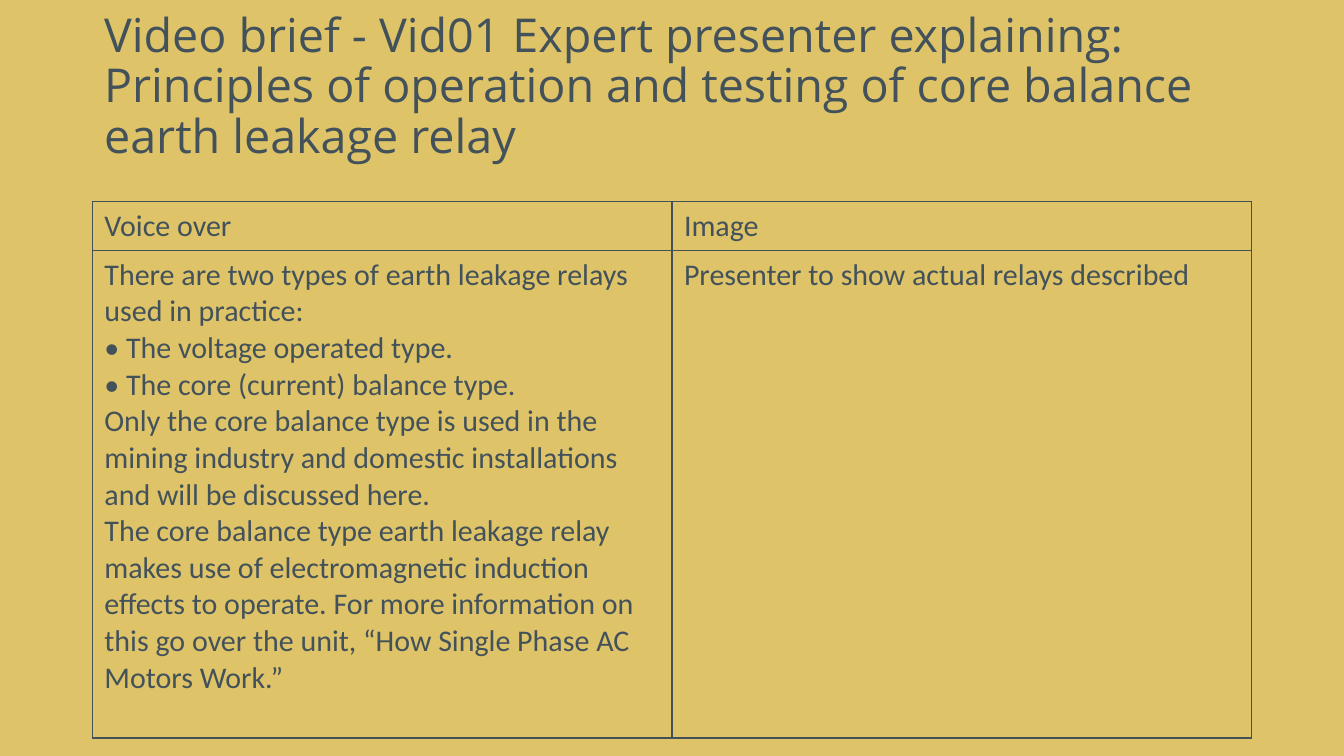
"""Builds the video brief slide with its voice over and image table."""
import pptx
import pptx.util
import pptx.dml.color
import pptx.enum.text
import pptx.oxml
import pptx.oxml.ns

COLOURS = {"background": "DEC368", "ink": "43525A"}
INK = pptx.dml.color.RGBColor.from_string(COLOURS["ink"])
BORDER_WIDTH = pptx.util.Pt(1)

HEADINGS = ["Voice over", "Image"]
VOICE_OVER = [
    "There are two types of earth leakage relays used in practice:",
    "• The voltage operated type.",
    "• The core (current) balance type.",
    "Only the core balance type is used in the mining industry and domestic "
    "installations and will be discussed here.",
    "The core balance type earth leakage relay makes use of electromagnetic "
    "induction effects to operate. For more information on this go over the "
    "unit, “How Single Phase AC Motors Work.”",
]
IMAGE = ["Presenter to show actual relays described"]
BRIEF = [[[heading] for heading in HEADINGS], [VOICE_OVER, IMAGE]]
ROW_HEIGHTS = [0.41, 4.06]


def write(frame, lines, font_name, size):
    frame.text = "\n".join(lines)
    for paragraph in frame.paragraphs:
        paragraph.font.name = font_name
        paragraph.font.size = pptx.util.Pt(size)
        paragraph.font.color.rgb = INK


def outline(cell):
    properties = cell._tc.get_or_add_tcPr()
    for position, side in enumerate(["lnL", "lnR", "lnT", "lnB"]):
        properties.insert(position, pptx.oxml.parse_xml(
            f'<a:{side} {pptx.oxml.ns.nsdecls("a")} w="{BORDER_WIDTH}"><a:solidFill>'
            f'<a:srgbClr val="{COLOURS["ink"]}"/></a:solidFill></a:{side}>'))


deck = pptx.Presentation()
deck.slide_width = pptx.util.Inches(11.2)
deck.slide_height = pptx.util.Inches(6.3)
slide = deck.slides.add_slide(deck.slide_layouts[6])
slide.background.fill.solid()
slide.background.fill.fore_color.rgb = pptx.dml.color.RGBColor.from_string(COLOURS["background"])

left = pptx.util.Inches(0.77)
content_width = deck.slide_width - 2 * left

title = slide.shapes.add_textbox(
    left, pptx.util.Inches(0.1), content_width, pptx.util.Inches(1.5)).text_frame
title.word_wrap = True
title.margin_top = 0
title.vertical_anchor = pptx.enum.text.MSO_ANCHOR.TOP
write(title, ["Video brief - Vid01 Expert presenter explaining: Principles of "
              "operation and testing of core balance earth leakage relay"], "Open Sans", 28)
title.paragraphs[0].line_spacing = 0.9

brief_table = slide.shapes.add_table(
    len(BRIEF), len(HEADINGS), left, pptx.util.Inches(1.68),
    content_width, pptx.util.Inches(sum(ROW_HEIGHTS))).table
brief_table.first_row = False
brief_table.horz_banding = False

for row, (height, contents) in enumerate(zip(ROW_HEIGHTS, BRIEF)):
    brief_table.rows[row].height = pptx.util.Inches(height)
    for column, lines in enumerate(contents):
        cell = brief_table.cell(row, column)
        cell.fill.background()
        outline(cell)
        write(cell.text_frame, lines, "Calibri", 18)

deck.save("out.pptx")
